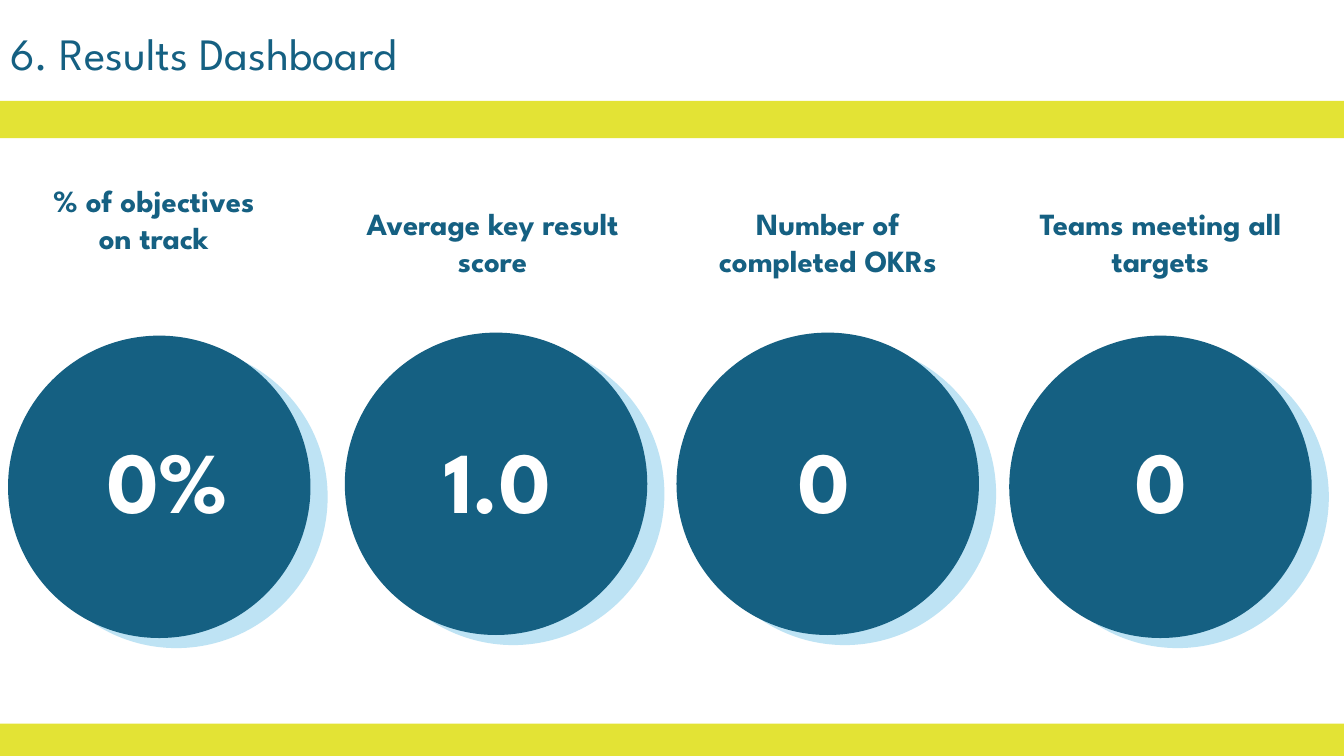
from pptx import Presentation
from pptx.dml.color import RGBColor
from pptx.enum.shapes import MSO_SHAPE
from pptx.enum.text import MSO_ANCHOR, MSO_AUTO_SIZE, PP_ALIGN
from pptx.util import Inches, Pt

COLS, ROWS = 133.3, 75


class Board:
    font = "League Spartan"
    hues = {"blue": "156082", "sky": "BEE3F4", "lime": "E3E335", "white": "FFFFFF"}

    def __init__(self, deck):
        self.slide = deck.slides.add_slide(deck.slide_layouts[5])
        self.col = deck.slide_width / COLS
        self.row = deck.slide_height / ROWS

    def hue(self, name):
        return RGBColor.from_string(self.hues[name])

    def area(self, left, top, width, height):
        return (round(left * self.col), round(top * self.row),
                round(width * self.col), round(height * self.row))

    def shape(self, kind, area, hue):
        item = self.slide.shapes.add_shape(kind, *self.area(*area))
        item.shadow.inherit = False
        item.fill.solid()
        item.fill.fore_color.rgb = self.hue(hue)
        item.line.fill.background()

    def letter(self, item, text, size, hue, bold, align):
        frame = item.text_frame
        frame.text = text
        frame.word_wrap = True
        frame.auto_size = MSO_AUTO_SIZE.SHAPE_TO_FIT_TEXT
        frame.vertical_anchor = MSO_ANCHOR.TOP
        line = frame.paragraphs[0]
        line.alignment = align
        font = line.runs[0].font
        font.name, font.size, font.bold = self.font, Pt(size), bold
        font.color.rgb = self.hue(hue)

    def title(self, text, area):
        item = self.slide.shapes.title
        item.left, item.top, item.width, item.height = self.area(*area)
        self.letter(item, text, 32, "blue", False, PP_ALIGN.LEFT)

    def label(self, text, area, size, hue):
        item = self.slide.shapes.add_textbox(*self.area(*area))
        self.letter(item, text, size, hue, True, PP_ALIGN.CENTER)

    def band(self, top, height):
        self.shape(MSO_SHAPE.RECTANGLE, (0, top, COLS, height), "lime")

    def disc(self, left, top):
        size = 30
        self.shape(MSO_SHAPE.OVAL, (left + 1.7, top + 1, size, size), "sky")
        self.shape(MSO_SHAPE.OVAL, (left, top, size, size), "blue")

    def metric(self, name, value, disc, head, figure):
        self.disc(*disc)
        self.label(name, head, 22, "blue")
        self.label(value, (figure, 41.8, 31.7, 11.4), 62, "white")


def main():
    deck = Presentation()
    deck.slide_width, deck.slide_height = Inches(13.33), Inches(7.5)
    board = Board(deck)
    board.title("6. Results Dashboard", (0, 2.1, 76, 6.4))
    metrics = [
        ("% of objectives on track", "0%", (0.8, 33.3), (3.5, 17.5, 23.5, 12.1), 0.8),
        ("Average key result score", "1.0", (34.2, 33), (33.5, 19.8, 30.7, 8.4), 33.5),
        ("Number of completed OKRs", "0", (67.1, 33), (67.1, 19.8, 30, 8.4), 65.9),
        ("Teams meeting all targets", "0", (100.1, 33.3), (100.1, 19.8, 30, 8.4), 99.3),
    ]
    for metric in metrics:
        board.metric(*metric)
    board.band(10, 3.7)
    board.band(71.8, 3.2)
    deck.save("out.pptx")


if __name__ == "__main__":
    main()
